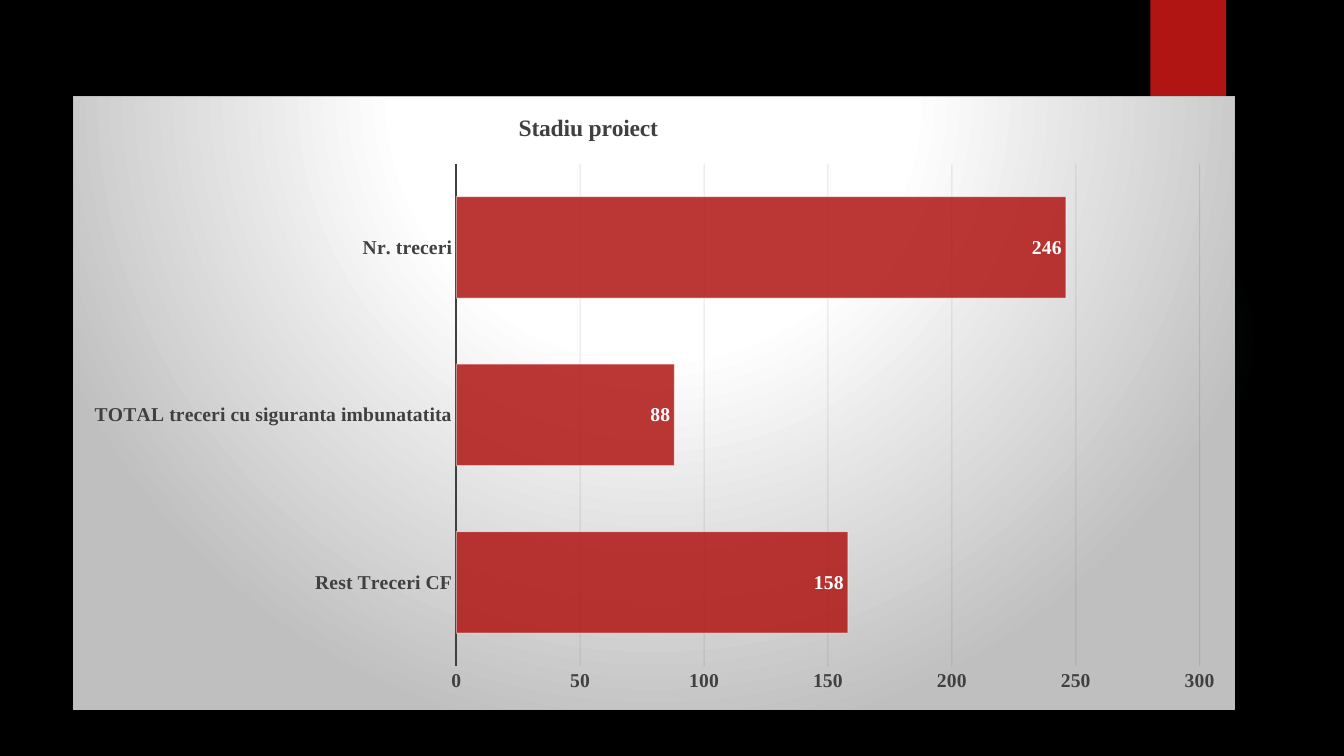
"""Builds the project status slide with its bar chart of level crossings."""
from dataclasses import dataclass

from pptx import Presentation, oxml, util as u
from pptx.chart.data import CategoryChartData
from pptx.dml.color import RGBColor
from pptx.enum import chart as charts, shapes
from pptx.oxml.ns import nsdecls, qn


@dataclass(frozen=True)
class Theme:
    """Colours, font and type sizes."""
    backdrop: str = "000000"
    accent: str = "B01513"
    glow: str = "50B9C1"
    light: str = "FFFFFF"
    panel: str = "BFBFBF"
    ink: str = "404040"
    grid: str = "0D0D0D"
    font: str = "Times New Roman"
    title_size: float = 16.8
    label_size: float = 14


class StatusSlide:
    """Holds the theme and the current slide."""

    def __init__(self, deck, theme):
        """Adds a blank slide with a plain background."""
        self.deck, self.theme = deck, theme
        self.slide = deck.slides.add_slide(deck.slide_layouts[6])
        self.paint(self.slide.background.fill, theme.backdrop)

    def area(self, left, top, width, height):
        """Turns percentages of the slide into lengths."""
        across, down = self.deck.slide_width / 100, self.deck.slide_height / 100
        return int(left * across), int(top * down), int(width * across), int(height * down)

    def paint(self, fill, color):
        """Applies a solid fill."""
        fill.solid()
        fill.fore_color.rgb = RGBColor.from_string(color)

    def rule(self, line, color, width):
        """Styles a line."""
        self.paint(line.fill, color)
        line.width = u.Pt(width)

    def lettering(self, font, color, size):
        """Styles bold text."""
        font.name, font.size, font.bold = self.theme.font, u.Pt(size), True
        font.color.rgb = RGBColor.from_string(color)

    def fade(self, root, route, percent):
        """Sets the opacity of the colours found along a route."""
        for color in root.xpath(route + "/a:solidFill/a:srgbClr"):
            color.append(oxml.parse_xml(f'<a:alpha {nsdecls("a")} val="{percent * 1000}"/>'))

    def radial(self, stops, top, bottom):
        """Returns a circular gradient from (position, colour, opacity) stops."""
        marks = "".join(
            f'<a:gs pos="{place * 1000}"><a:srgbClr val="{color}">'
            f'<a:alpha val="{opacity * 1000}"/></a:srgbClr></a:gs>'
            for place, color, opacity in stops)
        return oxml.parse_xml(
            f'<a:gradFill {nsdecls("a")} rotWithShape="1"><a:gsLst>{marks}</a:gsLst>'
            f'<a:path path="circle"><a:fillToRect l="50000" t="{top * 1000}" r="50000" '
            f'b="{bottom * 1000}"/></a:path></a:gradFill>')

    def shape(self, kind, place):
        """Adds a borderless accent shape."""
        shape = self.slide.shapes.add_shape(kind, *self.area(*place))
        shape.shadow.inherit = False
        self.paint(shape.fill, self.theme.accent)
        shape.line.fill.background()
        return shape

    def halo(self, place):
        """Adds the faint round glow."""
        properties = self.shape(shapes.MSO_SHAPE.OVAL, place).element.spPr
        stops = [(at, self.theme.glow, opacity) for at, opacity in ((0, 7), (36, 6), (69, 0))]
        properties.replace(properties.find(qn("a:solidFill")), self.radial(stops, 50, 50))

    def ribbon(self, place):
        """Adds the accent tab with a soft shadow."""
        properties = self.shape(shapes.MSO_SHAPE.RECTANGLE, place).element.spPr
        properties.find(qn("a:effectLst")).append(oxml.parse_xml(
            f'<a:outerShdw {nsdecls("a")} blurRad="{u.Pt(3)}" dist="{u.Pt(2)}" dir="5400000">'
            f'<a:srgbClr val="{self.theme.backdrop}"><a:alpha val="45000"/></a:srgbClr>'
            '</a:outerShdw>'))

    def arrange(self, part, index, target="", **shares):
        """Gives a chart part a fixed layout in shares of the chart."""
        for previous in part.findall(qn("c:layout")):
            part.remove(previous)
        modes = '<c:xMode val="edge"/><c:yMode val="edge"/>'
        sizes = "".join(f'<c:{name} val="{share}"/>' for name, share in shares.items())
        part.insert(index, oxml.parse_xml(
            f'<c:layout {nsdecls("c")}><c:manualLayout>{target}{modes}{sizes}'
            '</c:manualLayout></c:layout>'))

    def axis(self, axis):
        """Styles what both axes share."""
        axis.major_tick_mark = axis.minor_tick_mark = charts.XL_TICK_MARK.NONE
        self.lettering(axis.tick_labels.font, self.theme.ink, self.theme.label_size)

    def bars(self, place, heading, values):
        """Adds the horizontal bar chart."""
        theme = self.theme
        data = CategoryChartData()
        data.categories = list(values)
        data.add_series("Series 1", list(values.values()))
        chart = self.slide.shapes.add_chart(
            charts.XL_CHART_TYPE.BAR_CLUSTERED, *self.area(*place), data).chart
        root = chart.element
        self.lettering(chart.font, theme.light, theme.label_size)
        chart.has_legend = False

        chart.has_title = True
        title = chart.chart_title
        title.text_frame.text = heading
        self.lettering(title.text_frame.paragraphs[0].runs[0].font, theme.ink, theme.title_size)
        self.arrange(root.xpath("c:chart/c:title")[0], 1, x=0.38, y=0.02)
        self.arrange(root.xpath("c:chart/c:plotArea")[0], 0,
                     '<c:layoutTarget val="inner"/>', x=0.33, y=0.11, w=0.64, h=0.82)

        categories, scale = chart.category_axis, chart.value_axis
        self.axis(categories)
        self.axis(scale)
        self.rule(categories.format.line, theme.ink, 1.5)
        scale.format.line.fill.background()
        scale.minimum_scale, scale.maximum_scale, scale.major_unit = 0, 300, 50
        scale.has_major_gridlines = True
        self.rule(scale.major_gridlines.format.line, theme.grid, 0.75)
        self.fade(root, ".//c:majorGridlines/c:spPr/a:ln", 10)

        plot = chart.plots[0]
        plot.gap_width, plot.vary_by_categories = 65, False
        series = plot.series[0]
        self.paint(series.format.fill, theme.accent)
        self.rule(series.format.line, theme.light, 0.75)
        self.fade(root, ".//c:ser/c:spPr", 85)
        self.fade(root, ".//c:ser/c:spPr/a:ln", 50)
        labels = series.data_labels
        labels.show_value = True
        labels.position = charts.XL_LABEL_POSITION.INSIDE_END
        self.lettering(labels.font, theme.light, theme.label_size)

        panel = oxml.parse_xml(
            f'<c:spPr {nsdecls("c", "a")}><a:ln w="{u.Pt(0.75)}"><a:solidFill>'
            f'<a:srgbClr val="{theme.panel}"/></a:solidFill></a:ln></c:spPr>')
        stops = [(0, theme.light, 100), (39, theme.light, 100), (100, theme.panel, 100)]
        panel.insert(0, self.radial(stops, -80, 180))
        root.find(qn("c:chart")).addnext(panel)


def main():
    """Builds and saves the deck."""
    deck = Presentation()
    deck.slide_width, deck.slide_height = u.Inches(13.33), u.Inches(7.5)
    status = StatusSlide(deck, Theme())
    status.halo((70.59, 24.4, 23.11, 41.07))
    status.ribbon((85.6, 0, 5.63, 16.67))
    status.bars((5.4, 12.67, 86.5, 81.2), "Stadiu proiect", {
        "Rest Treceri CF": 158,
        "TOTAL treceri cu siguranta imbunatatita": 88,
        "Nr. treceri": 246,
    })
    deck.save("out.pptx")


if __name__ == "__main__":
    main()
